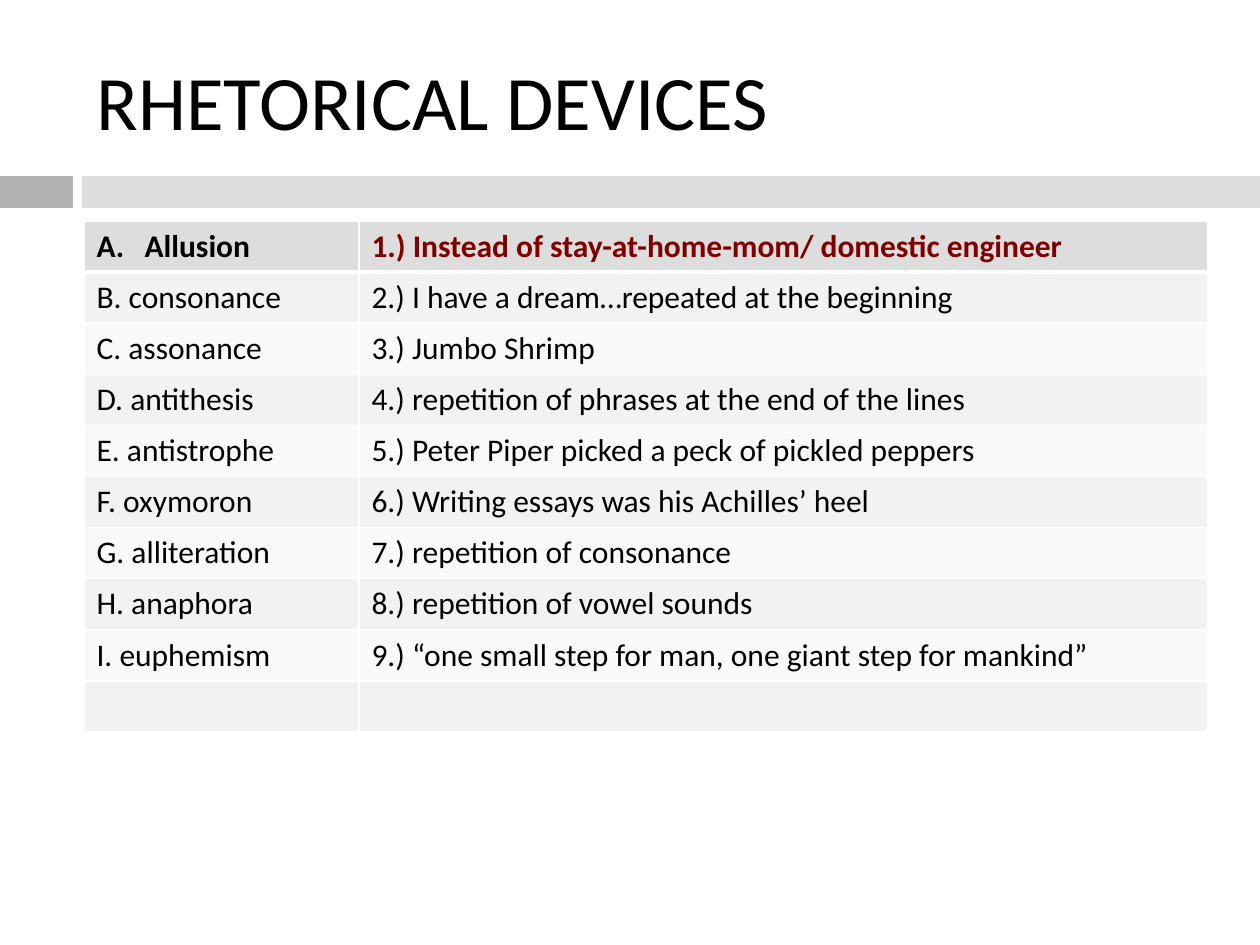
import pptx
import pptx.util
import pptx.dml.color
import pptx.enum.shapes
import pptx.enum.text
import pptx.oxml
import pptx.oxml.ns

TITLE = "RHETORICAL DEVICES"
ROWS = [
    ("Allusion", "1.) Instead of stay-at-home-mom/ domestic engineer"),
    ("B. consonance", "2.) I have a dream…repeated at the beginning"),
    ("C. assonance", "3.) Jumbo Shrimp"),
    ("D. antithesis", "4.) repetition of phrases at the end of the lines"),
    ("E. antistrophe", "5.) Peter Piper picked a peck of pickled peppers"),
    ("F. oxymoron", "6.) Writing essays was his Achilles’ heel"),
    ("G. alliteration", "7.) repetition of consonance"),
    ("H. anaphora", "8.) repetition of vowel sounds"),
    ("I. euphemism", "9.) “one small step for man, one giant step for mankind”"),
    ("", ""),
]
COLORS = {
    "text": "000000", "accent": "800000", "rule": "FFFFFF",
    "dark": "B2B2B2", "head": "DDDDDD", "odd": "F2F2F2", "even": "F9F9F9",
}
BARS = [(0, 73, "dark"), (82, 1178, "head")]
COLS = [275, 849]
LEFT, WIDTH, ROW = 84, sum(COLS), 51
INDENT = 48
FONT = "Calibri"


def px(n):
    return pptx.util.Emu(n * 914400 // 126)


def rgb(name):
    return pptx.dml.color.RGBColor.from_string(COLORS[name])


def paint(fill, name):
    fill.solid()
    fill.fore_color.rgb = rgb(name)


def write(para, text, size, color="text", bold=False):
    run = para.add_run()
    run.text = text
    run.font.name = FONT
    run.font.size = pptx.util.Pt(size)
    run.font.bold = bold
    run.font.color.rgb = rgb(color)


def border(cell, sides):
    props = cell._tc.get_or_add_tcPr()
    for side, width in sides.items():
        props.append(pptx.oxml.parse_xml(
            f'<a:ln{side} {pptx.oxml.ns.nsdecls("a")} w="{pptx.util.Pt(width)}">'
            f'<a:solidFill><a:srgbClr val="{COLORS["rule"]}"/></a:solidFill>'
            f'</a:ln{side}>'))


def number(para):
    props = para._p.get_or_add_pPr()
    props.set("marL", str(px(INDENT)))
    props.set("indent", str(-px(INDENT)))
    props.append(pptx.oxml.parse_xml(
        f'<a:buAutoNum {pptx.oxml.ns.nsdecls("a")} type="alphaUcPeriod"/>'))


def add_title(slide):
    title = slide.shapes.title
    title.left, title.top, title.width, title.height = map(px, (LEFT, 32, WIDTH, 136))
    frame = title.text_frame
    frame.word_wrap = True
    frame.vertical_anchor = pptx.enum.text.MSO_ANCHOR.MIDDLE
    para = frame.paragraphs[0]
    para.alignment = pptx.enum.text.PP_ALIGN.LEFT
    write(para, TITLE, 44)


def add_bars(slide):
    for left, width, color in BARS:
        bar = slide.shapes.add_shape(
            pptx.enum.shapes.MSO_SHAPE.RECTANGLE, px(left), px(176), px(width), px(32))
        bar.shadow.inherit = False
        paint(bar.fill, color)
        bar.line.fill.background()


def add_grid(slide):
    table = slide.shapes.add_table(
        len(ROWS), len(COLS), px(LEFT), px(221), px(WIDTH), px(ROW * len(ROWS))).table
    for col, width in zip(table.columns, COLS):
        col.width = px(width)
    for i, row in enumerate(ROWS):
        head = i == 0
        shade = "head" if head else "odd" if i % 2 else "even"
        for j, text in enumerate(row):
            cell = table.cell(i, j)
            border(cell, {"L": 1, "R": 1, "T": 3 if i == 1 else 1, "B": 3 if head else 1})
            paint(cell.fill, shade)
            para = cell.text_frame.paragraphs[0]
            if head and j == 0:
                number(para)
            if text:
                write(para, text, 18, "accent" if head and j else "text", head)
            else:
                para.font.size = pptx.util.Pt(18)


def main():
    deck = pptx.Presentation()
    deck.slide_width, deck.slide_height = px(1260), px(945)
    slide = deck.slides.add_slide(deck.slide_layouts[5])
    add_bars(slide)
    add_title(slide)
    add_grid(slide)
    deck.save("out.pptx")


if __name__ == "__main__":
    main()
